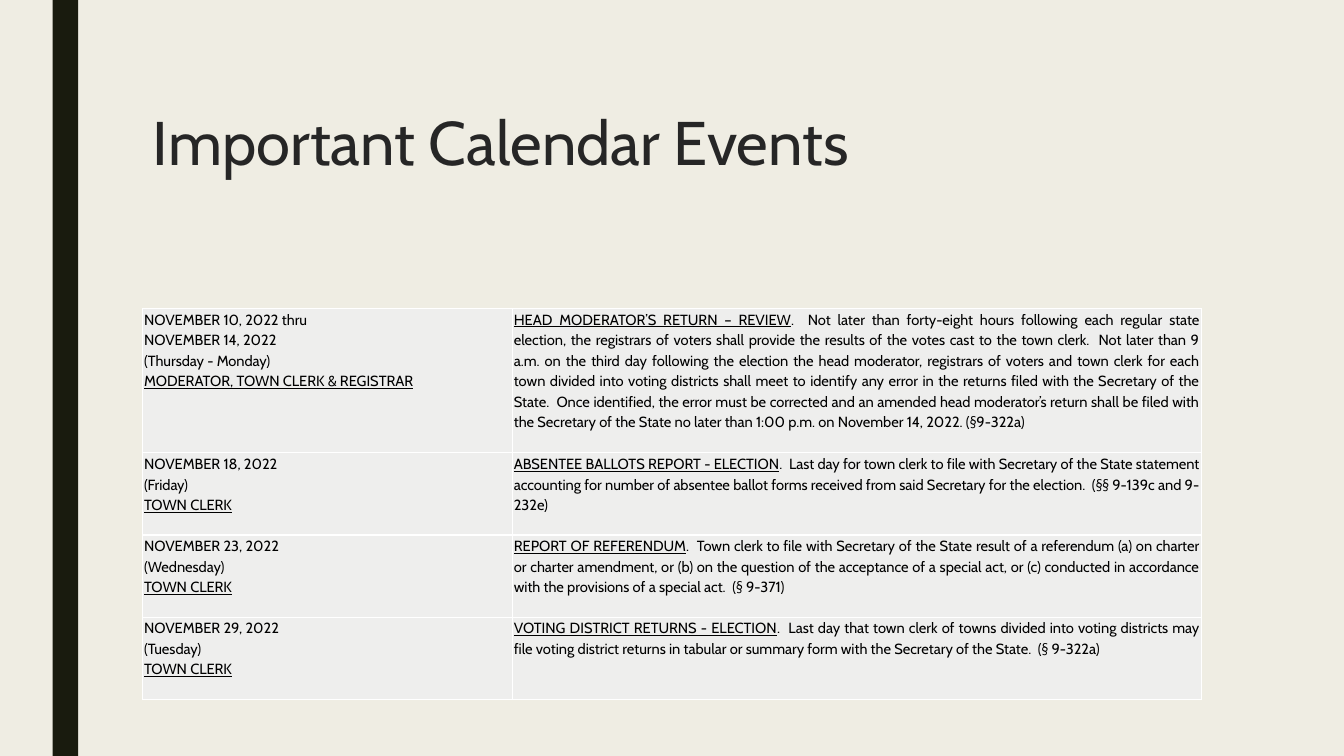
from dataclasses import dataclass

from lxml.etree import SubElement
from pptx import Presentation
from pptx.dml.color import RGBColor
from pptx.enum.shapes import MSO_SHAPE as Preset
from pptx.enum.text import MSO_ANCHOR as Anchor, MSO_AUTO_SIZE as AutoSize, PP_ALIGN as Align
from pptx.oxml.ns import qn
from pptx.util import Cm, Pt

CREAM = RGBColor(0xEF, 0xED, 0xE3)
DARK_OLIVE = RGBColor(0x19, 0x1B, 0x0E)
CHARCOAL = RGBColor(0x26, 0x26, 0x26)
BLACK = RGBColor(0x00, 0x00, 0x00)
PALE_GREY = RGBColor(0xEE, 0xEE, 0xED)
WHITE = RGBColor(0xFF, 0xFF, 0xFF)

FONT = "Cabin"
LEFT = Cm(3.6)
COLUMN_WIDTHS = (Cm(9.32), Cm(17.35))


@dataclass(frozen=True)
class CalendarEvent:
    dates: tuple[str, ...]
    officials: str
    heading: str
    details: str
    height: float = 2.07  # row height in cm


EVENTS = (
    CalendarEvent(
        ("NOVEMBER 10, 2022 thru", "NOVEMBER 14, 2022", "(Thursday - Monday)"),
        "MODERATOR, TOWN CLERK & REGISTRAR",
        "HEAD MODERATOR’S RETURN – REVIEW",
        ".  Not later than forty-eight hours following each regular state election, "
        "the registrars of voters shall provide the results of the votes cast to the "
        "town clerk.  Not later than 9 a.m. on the third day following the election "
        "the head moderator, registrars of voters and town clerk for each town divided "
        "into voting districts shall meet to identify any error in the returns filed "
        "with the Secretary of the State.  Once identified, the error must be corrected "
        "and an amended head moderator’s return shall be filed with the Secretary of "
        "the State no later than 1:00 p.m. on November 14, 2022. (§9-322a)",
        height=3.64,
    ),
    CalendarEvent(
        ("NOVEMBER 18, 2022", "(Friday)"),
        "TOWN CLERK",
        "ABSENTEE BALLOTS REPORT - ELECTION",
        ".  Last day for town clerk to file with Secretary of the State statement "
        "accounting for number of absentee ballot forms received from said Secretary "
        "for the election.  (§§ 9-139c and 9-232e)",
    ),
    CalendarEvent(
        ("NOVEMBER 23, 2022", "(Wednesday)"),
        "TOWN CLERK",
        "REPORT OF REFERENDUM",
        ".  Town clerk to file with Secretary of the State result of a referendum "
        "(a) on charter or charter amendment, or (b) on the question of the acceptance "
        "of a special act, or (c) conducted in accordance with the provisions of a "
        "special act.  (§ 9-371)",
    ),
    CalendarEvent(
        ("NOVEMBER 29, 2022", "(Tuesday)"),
        "TOWN CLERK",
        "VOTING DISTRICT RETURNS - ELECTION",
        ".  Last day that town clerk of towns divided into voting districts may file "
        "voting district returns in tabular or summary form with the Secretary of the "
        "State.  (§ 9-322a)",
    ),
)


def format_cell(cell) -> None:
    """Give a filled cell its colours, borders, margins and text format."""
    cell.fill.solid()
    cell.fill.fore_color.rgb = PALE_GREY
    cell.margin_left = cell.margin_right = Cm(0.03)
    cell.margin_top = cell.margin_bottom = 0
    cell.vertical_anchor = Anchor.TOP
    properties = cell._tc.get_or_add_tcPr()
    for position, side in enumerate(("lnL", "lnR", "lnT", "lnB")):
        border = SubElement(properties, qn(f"a:{side}"), w=str(Pt(1)))
        border_fill = SubElement(border, qn("a:solidFill"))
        SubElement(border_fill, qn("a:srgbClr"), val=str(WHITE))
        properties.insert(position, border)
    for paragraph in cell.text_frame.paragraphs:
        paragraph.alignment = Align.JUSTIFY
        paragraph.line_spacing = 1.15
        for run in paragraph.runs:
            run.font.name = FONT
            run.font.size = Pt(10.5)
            run.font.color.rgb = BLACK


def fill_row(date_cell, event_cell, event: CalendarEvent) -> None:
    """Write one event, with its officials and heading underlined."""
    date_cell.text_frame.text = "\n".join((*event.dates, event.officials))
    date_cell.text_frame.paragraphs[-1].runs[0].font.underline = True

    description = event_cell.text_frame.paragraphs[0]
    description.text = event.heading
    description.runs[0].font.underline = True
    description.add_run().text = event.details

    for cell in (date_cell, event_cell):
        format_cell(cell)


def add_side_bar(slide, height: int) -> None:
    side_bar = slide.shapes.add_shape(Preset.RECTANGLE, Cm(1.33), 0, Cm(0.64), height)
    side_bar.shadow.inherit = False
    side_bar.fill.solid()
    side_bar.fill.fore_color.rgb = DARK_OLIVE
    side_bar.line.fill.background()


def set_title(slide) -> None:
    title = slide.shapes.title
    title.left, title.top, title.width, title.height = LEFT, Cm(2.72), sum(COLUMN_WIDTHS), Cm(3.63)
    frame = title.text_frame
    frame.text = "Important Calendar Events"
    frame.auto_size = AutoSize.NONE
    frame.vertical_anchor = Anchor.TOP
    heading = frame.paragraphs[0]
    heading.alignment = Align.LEFT
    heading.line_spacing = 0.89
    font = heading.runs[0].font
    font.name = FONT
    font.size = Pt(44)
    font.color.rgb = CHARCOAL


def add_calendar(slide) -> None:
    total_height = Cm(sum(event.height for event in EVENTS))
    calendar = slide.shapes.add_table(
        len(EVENTS), len(COLUMN_WIDTHS), LEFT, Cm(7.77), sum(COLUMN_WIDTHS), total_height
    ).table
    calendar.first_row = calendar.horz_banding = False
    for column, width in zip(calendar.columns, COLUMN_WIDTHS):
        column.width = width
    for row, event in zip(calendar.rows, EVENTS):
        row.height = Cm(event.height)
        fill_row(*row.cells, event)


def main() -> None:
    deck = Presentation()
    deck.slide_width, deck.slide_height = Cm(33.87), Cm(19.05)
    slide = deck.slides.add_slide(deck.slide_layouts[5])

    # Background and side bar
    slide.background.fill.solid()
    slide.background.fill.fore_color.rgb = CREAM
    add_side_bar(slide, deck.slide_height)

    # Title and calendar
    set_title(slide)
    add_calendar(slide)
    deck.save("out.pptx")


if __name__ == "__main__":
    main()
